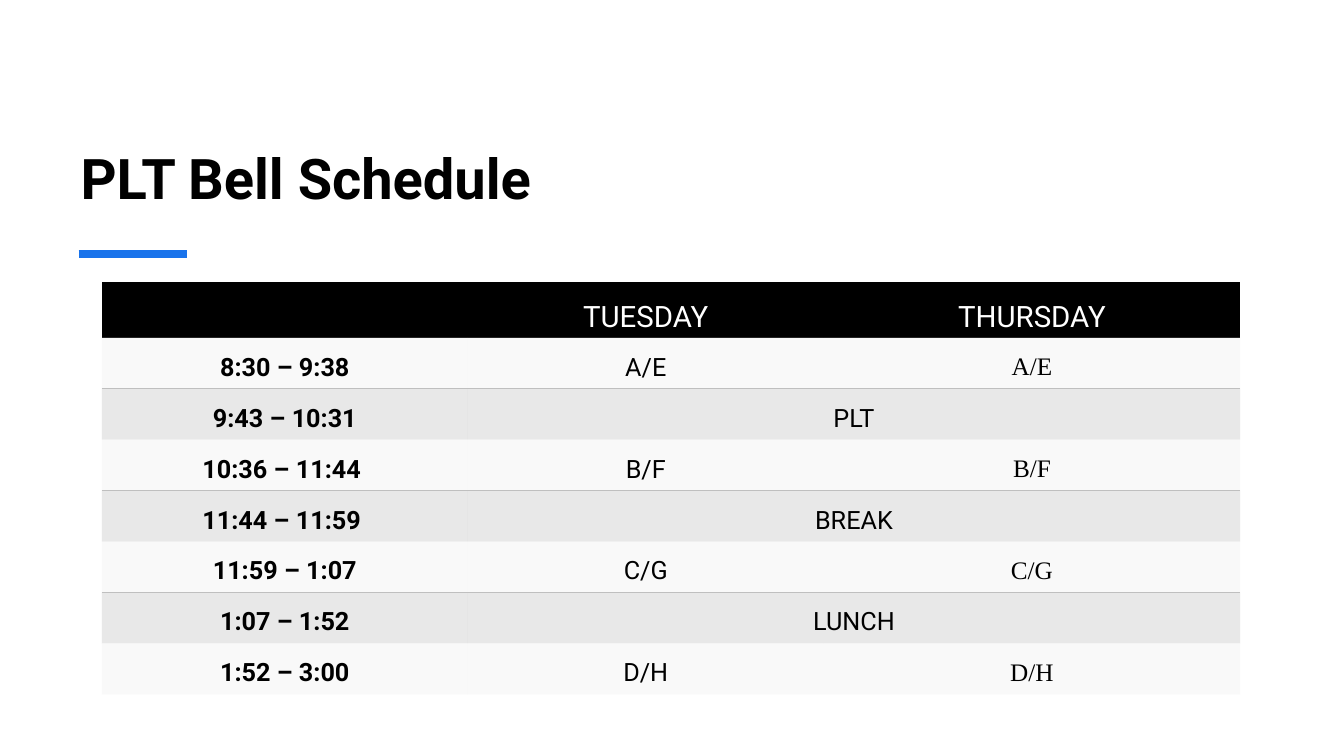
from dataclasses import dataclass

from lxml import etree
from pptx import Presentation
from pptx import util as u
from pptx.dml.color import RGBColor
from pptx.enum import shapes, text
from pptx.oxml import ns

SANS, SERIF = "Roboto", "Times New Roman"
BLACK, WHITE, BLUE = "000000", "FFFFFF", "1973EB"
LIGHT, GREY = "F2F2F2", "BFBFBF"
COLUMNS = (3.63, 3.53, 4.13)
TABLE_LEFT, TABLE_TOP, TABLE_HEIGHT = 1.01, 2.8, 4.09
HEADER_HEIGHT = 0.55


@dataclass
class Period:
    time: str
    tuesday: str
    thursday: str = ""

    @property
    def shared(self) -> bool:
        return not self.thursday


@dataclass
class Look:
    fill: str
    opacity: int = 100
    rule: str = ""


PERIODS = [
    Period("8:30 – 9:38", "A/E", "A/E"),
    Period("9:43 – 10:31", "PLT"),
    Period("10:36 – 11:44 ", "B/F", "B/F"),
    Period("11:44 – 11:59 ", "BREAK"),
    Period("11:59 – 1:07", "C/G", "C/G"),
    Period("1:07 – 1:52", "LUNCH"),
    Period("1:52 – 3:00", "D/H", "D/H"),
]


def colour(value: str) -> RGBColor:
    return RGBColor.from_string(value)


def add_span(para, words: str, size: float, shade: str = BLACK,
             font: str = SANS, bold: bool = False) -> None:
    span = para.add_run()
    span.text = words
    span.font.name = font
    span.font.size = u.Pt(size)
    span.font.bold = bold
    span.font.color.rgb = colour(shade)


def style_cell(cell, look: Look) -> None:
    """Set the margins, the one ruled side and the translucent fill."""
    cell.margin_left = cell.margin_right = u.Inches(0.11)
    cell.margin_top, cell.margin_bottom = u.Inches(0.15), 0
    properties = cell._tc.get_or_add_tcPr()
    for side in "LRTB":
        edge = etree.SubElement(properties, ns.qn(f"a:ln{side}"))
        if side == look.rule:
            edge.set("w", str(u.Pt(1)))
            paint = etree.SubElement(edge, ns.qn("a:solidFill"))
            etree.SubElement(paint, ns.qn("a:srgbClr"), val=GREY)
        else:
            edge.set("w", "0")
            etree.SubElement(edge, ns.qn("a:noFill"))
    cell.fill.solid()
    cell.fill.fore_color.rgb = colour(look.fill)
    if look.opacity < 100:
        shade = properties.find(ns.qn("a:solidFill")).find(ns.qn("a:srgbClr"))
        etree.SubElement(shade, ns.qn("a:alpha"), val=str(look.opacity * 1000))


def centred_para(cell):
    para = cell.text_frame.paragraphs[0]
    para.alignment = text.PP_ALIGN.CENTER
    return para


def add_title(page) -> None:
    box = page.shapes.add_textbox(*map(u.Inches, (0.7, 0.62, 11.91, 1.52)))
    frame = box.text_frame
    frame.word_wrap = True
    frame.vertical_anchor = text.MSO_ANCHOR.BOTTOM
    add_span(frame.paragraphs[0], "PLT Bell Schedule", 40, bold=True)

    accent = page.shapes.add_connector(
        shapes.MSO_CONNECTOR.STRAIGHT, *map(u.Inches, (0.78, 2.52, 1.85, 2.52)))
    accent.line.color.rgb = colour(BLUE)
    accent.line.width = u.Pt(6)
    etree.SubElement(accent._element.spPr, ns.qn("a:effectLst"))


def add_schedule(page) -> None:
    table = page.shapes.add_table(
        len(PERIODS) + 1, len(COLUMNS), u.Inches(TABLE_LEFT), u.Inches(TABLE_TOP),
        u.Inches(sum(COLUMNS)), u.Inches(TABLE_HEIGHT)).table
    table.first_row = table.horz_banding = False
    for column, width in zip(table.columns, COLUMNS):
        column.width = u.Inches(width)
    for row in table.rows:
        row.height = u.Inches((TABLE_HEIGHT - HEADER_HEIGHT) / len(PERIODS))
    table.rows[0].height = u.Inches(HEADER_HEIGHT)

    for index, day in enumerate(("", "TUESDAY", "THURSDAY")):
        cell = table.cell(0, index)
        style_cell(cell, Look(BLACK))
        cell.vertical_anchor = text.MSO_ANCHOR.MIDDLE
        if day:
            add_span(centred_para(cell), day, 21, WHITE)

    for number, period in enumerate(PERIODS, start=1):
        if period.shared:
            look = Look(GREY, 35, "T")
            table.cell(number, 1).merge(table.cell(number, 2))
        else:
            look = Look(LIGHT, 45, "B" if number < len(PERIODS) else "")
        entries = (period.time, period.tuesday, period.thursday)
        for index, entry in enumerate(entries):
            cell = table.cell(number, index)
            style_cell(cell, look)
            if entry:
                add_span(centred_para(cell), entry, 18,
                         font=SERIF if index == 2 else SANS, bold=index == 0)


def main() -> None:
    deck = Presentation()
    deck.slide_width, deck.slide_height = u.Inches(13.33), u.Inches(7.5)
    page = deck.slides.add_slide(deck.slide_layouts[6])
    add_title(page)
    add_schedule(page)
    deck.save("out.pptx")


if __name__ == "__main__":
    main()
